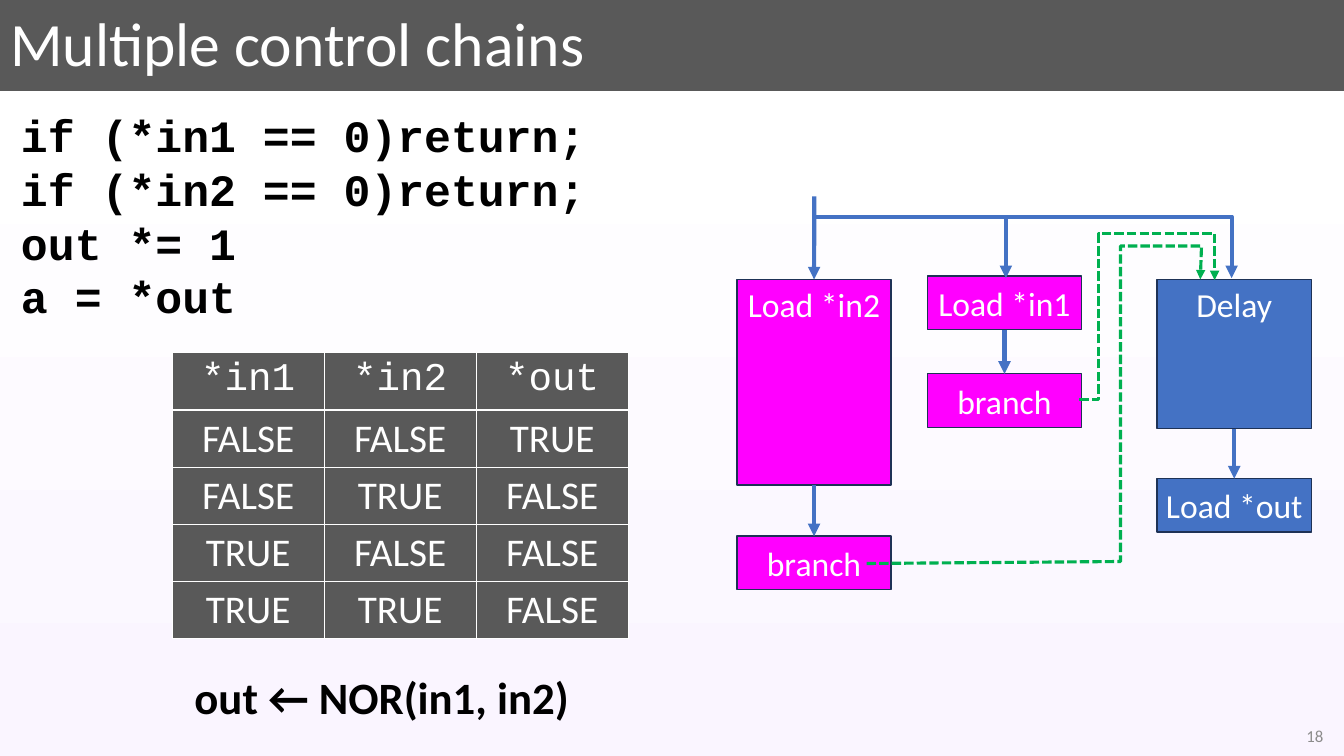
import copy
from dataclasses import dataclass

import pptx
import pptx.dml.color
import pptx.enum.dml
import pptx.enum.shapes
import pptx.enum.text
import pptx.oxml
import pptx.oxml.ns
import pptx.util
from pptx.util import Cm

GREY, WHITE, BLACK = "595959", "FFFFFF", "000000"
PINK, BLUE, NAVY, GREEN = "FF00FF", "4472C4", "1E3256", "00B050"
LEFT = pptx.enum.text.PP_ALIGN.LEFT
CENTER = pptx.enum.text.PP_ALIGN.CENTER
RIGHT = pptx.enum.text.PP_ALIGN.RIGHT
TOP = pptx.enum.text.MSO_ANCHOR.TOP
MIDDLE = pptx.enum.text.MSO_ANCHOR.MIDDLE
BOX_W, BOX_H = 3.89, 1.35


@dataclass
class Box:
    label: str
    x: float
    y: float
    fill: str
    h: float = BOX_H
    anchor: pptx.enum.text.MSO_ANCHOR = MIDDLE


@dataclass
class Route:
    points: list[tuple[float, float]]
    color: str = BLUE
    width: float = 3
    dashed: bool = False


def rgb(color: str) -> pptx.dml.color.RGBColor:
    return pptx.dml.color.RGBColor.from_string(color)


def write(tf, text: str, *, size: float, color: str = WHITE, font: str = "Calibri",
          bold: bool = False, align=LEFT, anchor=TOP, spacing: float = 1.0) -> None:
    tf.word_wrap = True
    tf.vertical_anchor = anchor
    for i, line in enumerate(text.split("\n")):
        p = tf.add_paragraph() if i else tf.paragraphs[0]
        p.alignment = align
        p.line_spacing = spacing
        r = p.add_run()
        r.text = line
        r.font.name = font
        r.font.size = pptx.util.Pt(size)
        r.font.bold = bold
        r.font.color.rgb = rgb(color)


def add_text(s, x: float, y: float, w: float, h: float, text: str, **fmt) -> None:
    tb = s.shapes.add_textbox(Cm(x), Cm(y), Cm(w), Cm(h))
    write(tb.text_frame, text, **fmt)


def set_background(s, stops: list[tuple[int, str]]) -> None:
    fill = s.background.fill
    fill.gradient()
    fill.gradient_angle = 270
    gs_list = fill.gradient_stops[0]._gs.getparent()
    for _ in range(len(stops) - len(gs_list)):
        gs_list.append(copy.deepcopy(gs_list[0]))
    for stop, (percent, color) in zip(fill.gradient_stops, stops):
        stop.position = percent / 100
        stop.color.rgb = rgb(color)


def add_box(s, box: Box):
    sp = s.shapes.add_shape(pptx.enum.shapes.MSO_SHAPE.RECTANGLE,
                            Cm(box.x), Cm(box.y), Cm(BOX_W), Cm(box.h))
    sp.shadow.inherit = False
    sp.fill.solid()
    sp.fill.fore_color.rgb = rgb(box.fill)
    sp.line.color.rgb = rgb(NAVY)
    sp.line.width = pptx.util.Pt(1)
    tf = sp.text_frame
    tf.margin_left = tf.margin_right = Cm(0.1)
    write(tf, box.label, size=24, align=CENTER, anchor=box.anchor)
    return sp


def style_arrow(line, color: str, width: float) -> None:
    line.color.rgb = rgb(color)
    line.width = pptx.util.Pt(width)
    tail = pptx.oxml.parse_xml(f'<a:tailEnd {pptx.oxml.ns.nsdecls("a")} type="triangle"/>')
    line._get_or_add_ln().append(tail)


def add_arrow(s, target, source=None, start: tuple[float, float] = (0, 0)) -> None:
    x, y = start
    c = s.shapes.add_connector(pptx.enum.shapes.MSO_CONNECTOR.STRAIGHT,
                               Cm(x), Cm(y), Cm(x), Cm(y))
    if source is not None:
        c.begin_connect(source, 2)
    c.end_connect(target, 0)
    style_arrow(c.line, BLUE, 3)
    c._element.spPr.append(
        pptx.oxml.parse_xml(f'<a:effectLst {pptx.oxml.ns.nsdecls("a")}/>'))


def add_route(s, route: Route) -> None:
    points = [(Cm(x), Cm(y)) for x, y in route.points]
    builder = s.shapes.build_freeform(*points[0])
    builder.add_line_segments(points[1:], close=False)
    sp = builder.convert_to_shape()
    sp.shadow.inherit = False
    sp.fill.background()
    if route.dashed:
        sp.line.dash_style = pptx.enum.dml.MSO_LINE.SQUARE_DOT
    style_arrow(sp.line, route.color, route.width)


def add_truth_table(s, x: float, y: float, col_w: float, row_h: float,
                    rows: list[list[str]]) -> None:
    n_rows, n_cols = len(rows), len(rows[0])
    table = s.shapes.add_table(n_rows, n_cols, Cm(x), Cm(y),
                               Cm(col_w * n_cols), Cm(row_h * n_rows)).table
    for i, values in enumerate(rows):
        for j, value in enumerate(values):
            cell = table.cell(i, j)
            write(cell.text_frame, value, size=28, align=CENTER,
                  font="Calibri" if i else "Courier New")
            tc_pr = cell._tc.get_or_add_tcPr()
            for side in ("lnL", "lnR", "lnT", "lnB"):
                tc_pr.append(pptx.oxml.parse_xml(
                    f'<a:{side} {pptx.oxml.ns.nsdecls("a")} w="12700"><a:solidFill>'
                    f'<a:srgbClr val="{WHITE}"/></a:solidFill></a:{side}>'))
            cell.fill.solid()
            cell.fill.fore_color.rgb = rgb(GREY)


def main() -> None:
    prs = pptx.Presentation()
    prs.slide_width, prs.slide_height = Cm(33.87), Cm(19.05)
    s = prs.slides.add_slide(prs.slide_layouts[5])
    set_background(s, [(0, GREY), (12, GREY), (12, WHITE), (100, "FAF5FF")])

    # Title and slide number
    title = s.shapes.title
    title.left, title.top, title.width, title.height = Cm(0), Cm(0), Cm(33.6), Cm(2.34)
    title.text_frame.auto_size = pptx.enum.text.MSO_AUTO_SIZE.NONE
    write(title.text_frame, "Multiple control chains", size=44, anchor=MIDDLE, spacing=0.9)
    add_text(s, 25.98, 18.03, 7.62, 1.02, "18", size=12, color="8C8C8C",
             align=RIGHT, anchor=MIDDLE)

    # Code
    code = "if (*in1 == 0)return;\nif (*in2 == 0)return;\nout *= 1\na = *out"
    add_text(s, 0.28, 2.59, 15.72, 5.74, code, size=32, color=BLACK,
             font="Courier New", bold=True)

    # Control chains
    load_in2, branch_in2, load_in1, branch_in1, delay, load_out = [add_box(s, b) for b in (
        Box("Load *in2", 18.57, 7.04, PINK, 5.18, TOP),
        Box("branch", 18.57, 13.51, PINK),
        Box("Load *in1", 23.37, 6.96, PINK),
        Box("branch", 23.37, 9.42, PINK),
        Box("Delay", 29.16, 7.04, BLUE, 3.76, TOP),
        Box("Load *out", 29.16, 12.06, BLUE),
    )]
    for source, target in ((load_in2, branch_in2), (load_in1, branch_in1), (delay, load_out)):
        add_arrow(s, target, source)
    add_arrow(s, load_in2, start=(20.52, 4.95))

    # Fork to the chains, and branch results to the delay
    for route in (
        Route([(25.35, 5.46), (31.04, 5.46), (31.04, 7.01)]),
        Route([(20.55, 5.46), (25.35, 5.46), (25.35, 7.01)]),
        Route([(21.84, 14.2), (28.24, 14.15), (28.24, 6.2), (30.28, 6.2), (30.25, 7.04)],
              GREEN, 2.25, True),
        Route([(27.2, 10.06), (27.69, 10.06), (27.69, 5.89), (30.61, 5.89), (30.61, 7.06)],
              GREEN, 2.25, True),
    ):
        add_route(s, route)

    # Truth table and conclusion
    add_truth_table(s, 4.34, 8.89, 3.83, 1.44, [
        ["*in1", "*in2", "*out"],
        ["FALSE", "FALSE", "TRUE"],
        ["FALSE", "TRUE", "FALSE"],
        ["TRUE", "FALSE", "FALSE"],
        ["TRUE", "TRUE", "FALSE"],
    ])
    add_text(s, 4.34, 16.74, 10.57, 1.63, "out ← NOR(in1, in2)", size=32, color=BLACK,
             bold=True, align=CENTER)

    prs.save("out.pptx")


if __name__ == "__main__":
    main()
